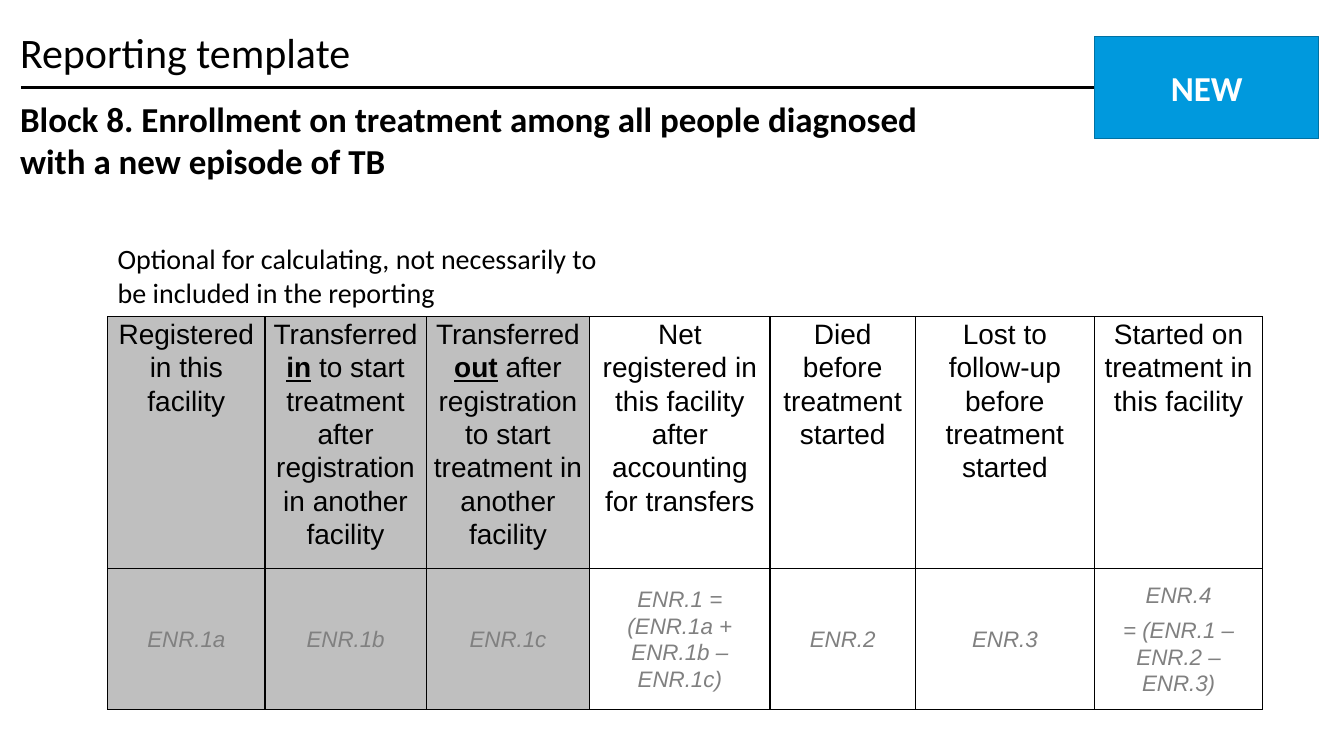
from lxml.etree import SubElement
from pptx import Presentation
from pptx.dml.color import RGBColor
from pptx.enum.shapes import MSO_CONNECTOR, MSO_SHAPE
from pptx.enum.text import MSO_ANCHOR, PP_ALIGN
from pptx.oxml import parse_xml
from pptx.oxml.ns import nsdecls, qn
from pptx.util import Pt

BLACK = RGBColor(0x00, 0x00, 0x00)
WHITE = RGBColor(0xFF, 0xFF, 0xFF)
GREY = RGBColor(0x80, 0x80, 0x80)
SHADE = RGBColor(0xBF, 0xBF, 0xBF)
BLUE = RGBColor(0x00, 0x99, 0xDD)
EDGE = RGBColor(0x00, 0x71, 0xA3)


def style(para, size, color, name="Calibri", bold=False):
    font = para.font
    font.name, font.size, font.bold = name, Pt(size), bold
    font.color.rgb = color


def add_text(left, top, width, height, text, size, bold=False):
    frame = slide.shapes.add_textbox(
        Pt(left), Pt(top), Pt(width), Pt(height)).text_frame
    frame.word_wrap = True
    frame.text = text
    style(frame.paragraphs[0], size, BLACK, bold=bold)
    return frame


deck = Presentation()
deck.slide_width, deck.slide_height = Pt(960), Pt(540)
slide = deck.slides.add_slide(deck.slide_layouts[6])

# Rule under the title
rule = slide.shapes.add_connector(
    MSO_CONNECTOR.STRAIGHT, Pt(15), Pt(62.5), Pt(942.5), Pt(62.5))
rule.line.color.rgb = BLACK
rule.line.width = Pt(1.5)
SubElement(rule._element.spPr, qn("a:effectLst"))

# Heading and title
head = add_text(14.4, 70, 687, 430,
                "Block 8. Enrollment on treatment among all people "
                "diagnosed with a new episode of TB", 25, True)
head.margin_left = head.margin_right = head.margin_top = head.margin_bottom = 0
title = add_text(7.2, 8.6, 943, 61, "Reporting template", 30)
title.vertical_anchor = MSO_ANCHOR.MIDDLE
title.paragraphs[0].line_spacing = 0.9

# Badge
badge = slide.shapes.add_shape(
    MSO_SHAPE.RECTANGLE, Pt(782), Pt(26), Pt(160), Pt(73))
badge.shadow.inherit = False
badge.fill.solid()
badge.fill.fore_color.rgb = BLUE
badge.line.color.rgb = EDGE
badge.line.width = Pt(1)
badge.text_frame.text = "NEW"
badge.text_frame.vertical_anchor = MSO_ANCHOR.MIDDLE
label = badge.text_frame.paragraphs[0]
label.alignment = PP_ALIGN.CENTER
style(label, 25, WHITE, bold=True)

# Table: header, code; words between * are bold and underlined
COLS = [
    (112.3, "Registered in this facility", "ENR.1a"),
    (115.2, "Transferred *in* to start treatment after registration "
            "in another facility", "ENR.1b"),
    (116.8, "Transferred *out* after registration to start treatment "
            "in another facility", "ENR.1c"),
    (128.8, "Net registered in this facility after accounting "
            "for transfers", "ENR.1 = (ENR.1a + ENR.1b – ENR.1c)"),
    (103.8, "Died before treatment started", "ENR.2"),
    (128, "Lost to follow-up before treatment started", "ENR.3"),
    (120.2, "Started on treatment in this facility",
     "ENR.4\n= (ENR.1 – ENR.2 – ENR.3)"),
]
grid = slide.shapes.add_table(
    2, len(COLS), Pt(77), Pt(226.2), Pt(825.1), Pt(277.2)).table
grid.rows[0].height, grid.rows[1].height = Pt(176.4), Pt(100.8)
for col, (width, *texts) in enumerate(COLS):
    grid.columns[col].width = Pt(width)
    for row, text in enumerate(texts):
        cell = grid.cell(row, col)
        cell.margin_left = cell.margin_right = Pt(5)
        cell.margin_top = cell.margin_bottom = 0
        cell.vertical_anchor = MSO_ANCHOR.MIDDLE if row else MSO_ANCHOR.TOP
        cell.fill.solid()
        cell.fill.fore_color.rgb = SHADE if col < 3 else WHITE

        # Borders come before the fill
        for spot, side in enumerate(("lnL", "lnR", "lnT", "lnB")):
            cell._tc.tcPr.insert(spot, parse_xml(
                f'<a:{side} {nsdecls("a")} w="{Pt(1)}"><a:solidFill>'
                f'<a:srgbClr val="{BLACK}"/></a:solidFill></a:{side}>'))

        frame = cell.text_frame
        for num, line in enumerate(text.split("\n")):
            para = frame.add_paragraph() if num else frame.paragraphs[0]
            for part, words in enumerate(line.split("*")):
                run = para.add_run()
                run.text = words
                if part == 1:
                    run.font.bold = run.font.underline = True
            para.alignment = PP_ALIGN.CENTER
            para.line_spacing = 1.07
            para.space_after = Pt(6)
            style(para, 16 if row else 20, GREY if row else BLACK, "Arial")
            para.font.italic = bool(row)

# Note above the shaded columns
add_text(77, 169.2, 364.3, 55.4,
         "Optional for calculating, not necessarily to be included "
         "in the reporting", 20)

deck.save("out.pptx")
